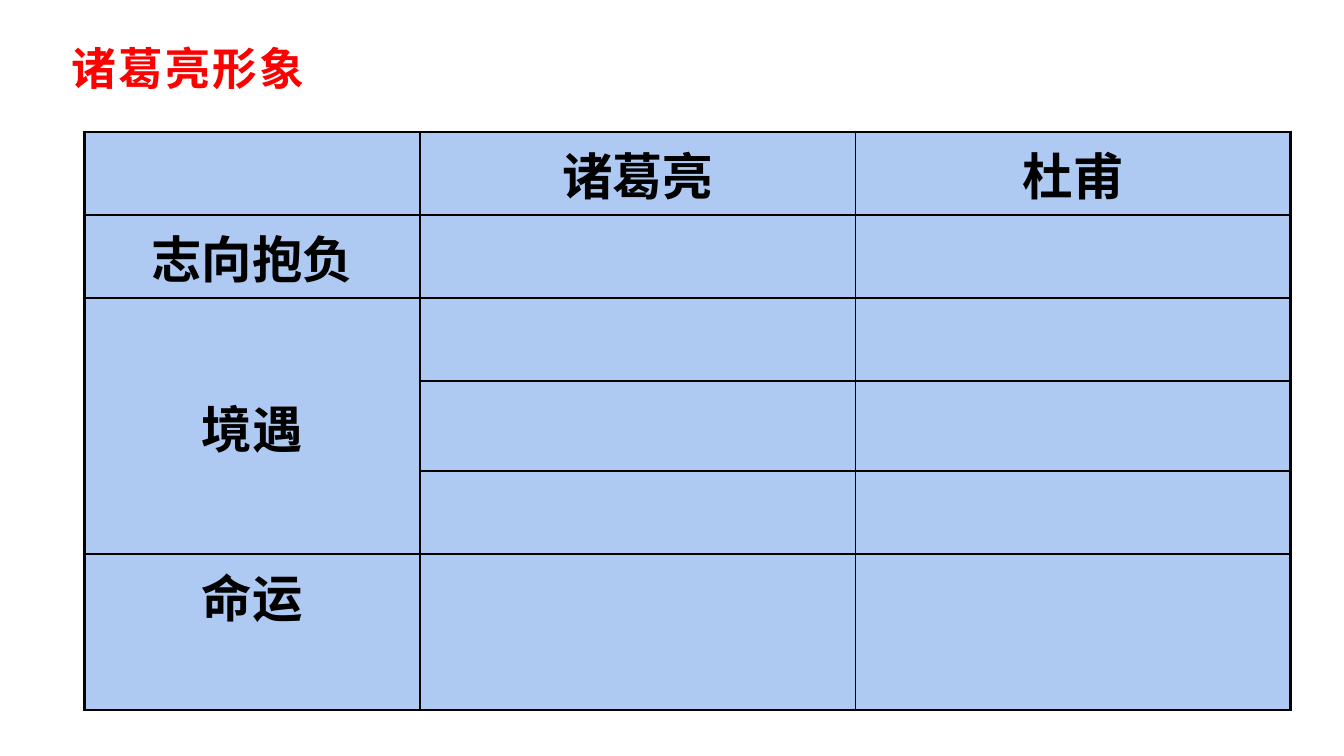
"""Build a slide with a table comparing Zhuge Liang and Du Fu."""
from lxml.etree import SubElement as Sub
from pptx import Presentation
from pptx.dml.color import RGBColor as RGB
from pptx.enum.text import MSO_ANCHOR as Anchor, MSO_AUTO_SIZE as Auto, PP_ALIGN as Align
from pptx.oxml.ns import qn
from pptx.util import Pt

HUES = {"title": "FF0000", "text": "000000", "line": "000000", "cell": "6096E6"}
FONT = "Noto Sans CJK SC"


def write(frame, text, size, hue, align, gap=0):
    para = frame.paragraphs[0]
    para.alignment = align
    run = para.add_run()
    run.text = text
    font = run.font
    font.size, font.bold, font.name = Pt(size), True, FONT
    font.color.rgb = RGB.from_string(HUES[hue])
    props = run._r.get_or_add_rPr()
    Sub(props, qn("a:ea")).set("typeface", FONT)
    if gap:
        props.set("spc", str(gap))
    return para


def paint(cell, wide):
    props = cell._tc.get_or_add_tcPr()
    for side in "LRTB":
        width = Pt(2.25 if side in wide else 1)
        line = Sub(props, qn(f"a:ln{side}"), w=str(width))
        Sub(Sub(line, qn("a:solidFill")), qn("a:srgbClr"), val=HUES["line"])
    cell.fill.solid()
    cell.fill.fore_color.rgb = RGB.from_string(HUES["cell"])
    tint = props.find(qn("a:solidFill")).find(qn("a:srgbClr"))
    Sub(tint, qn("a:alpha"), val="50000")


deck = Presentation()
deck.slide_width, deck.slide_height = Pt(960), Pt(540)
slide = deck.slides.add_slide(deck.slide_layouts[5])

title = slide.shapes.title
title.left, title.top, title.width, title.height = Pt(44), Pt(15), Pt(681), Pt(55)
frame = title.text_frame
frame.auto_size = Auto.NONE
frame.vertical_anchor = Anchor.MIDDLE
head = write(frame, "诸葛亮形象", 32, "title", Align.LEFT, gap=150)
head.line_spacing = 1.3
head.space_after = Pt(10)

cols = [239.5, 311, 311]
rows = [59.3, 59.3, 59.3, 64.3, 59.3, 111.5]
table = slide.shapes.add_table(
    len(rows), len(cols), Pt(60.5), Pt(94.3), Pt(sum(cols)), Pt(sum(rows))
).table
for col, width in zip(table.columns, cols):
    col.width = Pt(width)
for row, height in zip(table.rows, rows):
    row.height = Pt(height)

for r in range(len(rows)):
    for c in range(len(cols)):
        edges = {"L": c == 0, "R": c == len(cols) - 1, "T": r == 0, "B": r == len(rows) - 1}
        paint(table.cell(r, c), [side for side, outer in edges.items() if outer])

table.cell(2, 0).merge(table.cell(4, 0))
table.cell(2, 0).vertical_anchor = Anchor.MIDDLE
labels = {(0, 1): "诸葛亮", (0, 2): "杜甫", (1, 0): "志向抱负", (2, 0): "境遇", (5, 0): "命运"}
for (r, c), text in labels.items():
    write(table.cell(r, c).text_frame, text, 36, "text", Align.CENTER)

deck.save("out.pptx")
